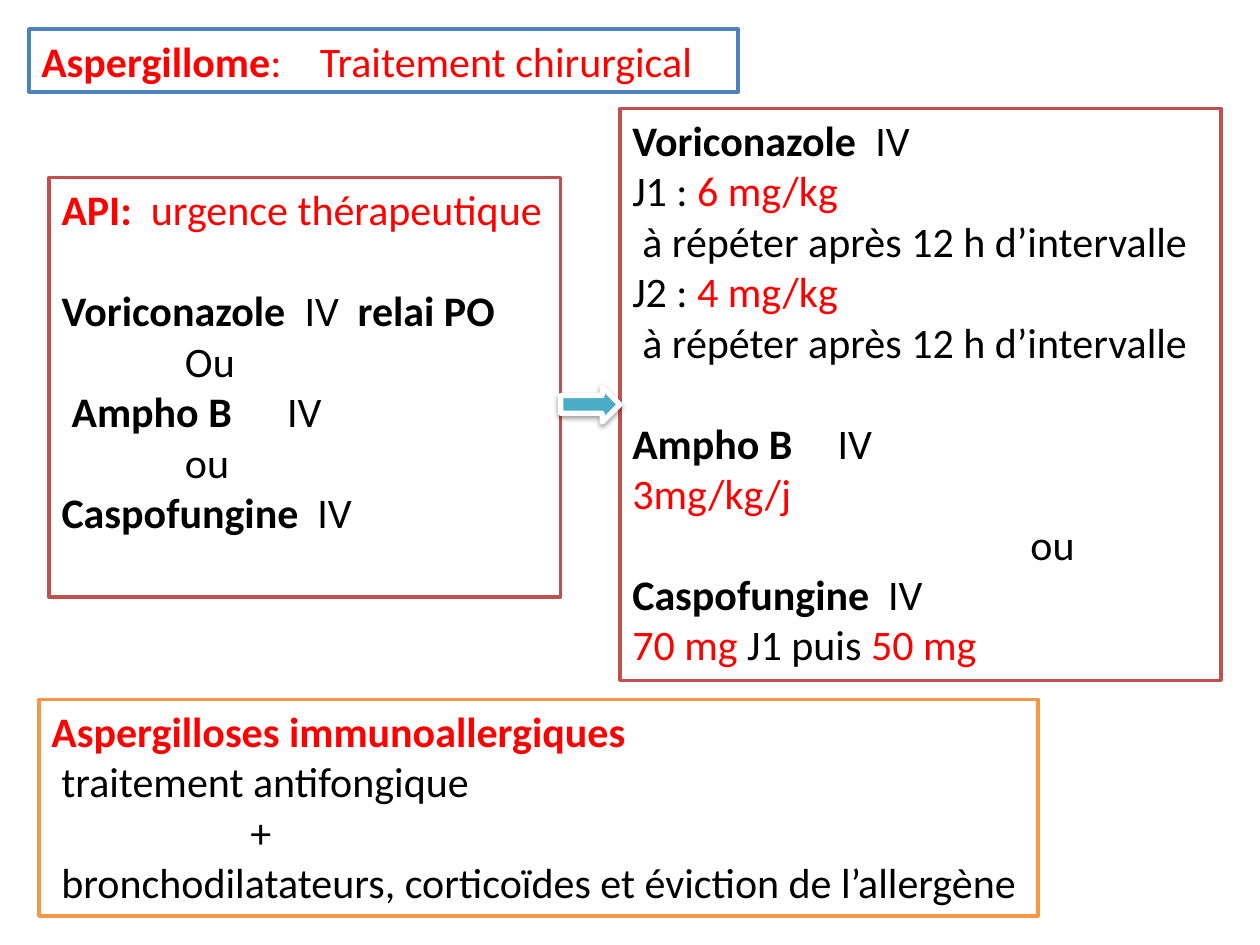
from dataclasses import dataclass

from lxml import etree
from pptx import Presentation
from pptx import util as u
from pptx.dml.color import RGBColor
from pptx.enum import shapes, text
from pptx.oxml import ns


@dataclass(frozen=True)
class Theme:
    font: str = "Calibri"
    size: int = 24
    blank_line: int = 29
    black: str = "000000"
    red: str = "FF0000"
    white: str = "FFFFFF"
    blue: str = "4F81BD"
    brick: str = "C0504D"
    orange: str = "F79646"
    teal: str = "4BACC6"


THEME = Theme()


def plain(words):
    return words, THEME.black, False


def strong(words):
    return words, THEME.black, True


def red(words):
    return words, THEME.red, False


def heading(words):
    return words, THEME.red, True


def line(*runs, indent=0, tabs=(), gap=False):
    return runs, indent, tabs, gap


def drug(name, tab, **options):
    return line(strong(name), plain("\tIV"), tabs=(tab,), **options)


def add_shape(slide, kind, place, fill, outline, width):
    shape = slide.shapes.add_shape(kind, *map(u.Inches, place))
    shape.fill.solid()
    shape.fill.fore_color.rgb = RGBColor.from_string(fill)
    shape.line.color.rgb = RGBColor.from_string(outline)
    shape.line.width = u.Pt(width)
    shape.shadow.inherit = False
    return shape


def add_tabs(properties, tabs):
    tab_list = etree.SubElement(properties, ns.qn("a:tabLst"))
    for position in tabs:
        etree.SubElement(tab_list, ns.qn("a:tab"), pos=str(u.Inches(position)), algn="l")


def add_line(paragraph, runs, indent, tabs, gap):
    properties = paragraph._p.get_or_add_pPr()
    properties.set("marL", str(u.Inches(indent)))
    if tabs:
        add_tabs(properties, tabs)
    paragraph.alignment = text.PP_ALIGN.LEFT
    if gap:
        paragraph.space_before = u.Pt(THEME.blank_line)
    for words, color, bold in runs:
        run = paragraph.add_run()
        run.text = words
        run.font.name = THEME.font
        run.font.size = u.Pt(THEME.size)
        run.font.bold = bold
        run.font.color.rgb = RGBColor.from_string(color)


def add_box(slide, place, outline, lines):
    shape = add_shape(slide, shapes.MSO_SHAPE.RECTANGLE, place, THEME.white, outline, 2)
    frame = shape.text_frame
    frame.word_wrap = True
    frame.vertical_anchor = text.MSO_ANCHOR.TOP
    for index, content in enumerate(lines):
        paragraph = frame.add_paragraph() if index else frame.paragraphs[0]
        add_line(paragraph, *content)


def add_arrow(slide, place):
    arrow = add_shape(slide, shapes.MSO_SHAPE.RIGHT_ARROW, place, THEME.teal, THEME.white, 3)
    effects = arrow._element.spPr.find(ns.qn("a:effectLst"))
    shadow = etree.SubElement(
        effects, ns.qn("a:outerShdw"), blurRad=str(u.Pt(3.1)), dist=str(u.Pt(1.6)),
        dir="5400000", rotWithShape="0",
    )
    color = etree.SubElement(shadow, ns.qn("a:srgbClr"), val=THEME.black)
    etree.SubElement(color, ns.qn("a:alpha"), val="38000")


def main():
    presentation = Presentation()
    presentation.slide_width = u.Inches(10)
    presentation.slide_height = u.Inches(7.5)
    slide = presentation.slides.add_slide(presentation.slide_layouts[6])

    add_box(slide, (0.23, 0.23, 5.63, 0.5), THEME.blue, [
        line(heading("Aspergillome"), red(":\tTraitement chirurgical"), tabs=(2.21,)),
    ])
    add_box(slide, (0.39, 1.41, 4.06, 3.33), THEME.brick, [
        line(heading("API:"), red("\turgence thérapeutique"), tabs=(0.71,)),
        line(strong("Voriconazole"), plain("\tIV"), strong("\trelai PO"),
             tabs=(1.93, 2.35), gap=True),
        line(plain("Ou"), indent=0.98),
        drug("Ampho B", 1.71, indent=0.08),
        line(plain("ou"), indent=0.98),
        drug("Caspofungine", 2.03),
    ])
    add_box(slide, (0.31, 5.55, 7.93, 1.72), THEME.orange, [
        line(heading("Aspergilloses immunoallergiques")),
        line(plain("traitement antifongique"), indent=0.08),
        line(plain("+"), indent=1.58),
        line(plain("bronchodilatateurs, corticoïdes et éviction de l’allergène"), indent=0.08),
    ])
    repeat = line(plain("à répéter après 12 h d’intervalle"), indent=0.08)
    add_box(slide, (4.92, 0.86, 4.77, 4.54), THEME.brick, [
        drug("Voriconazole", 1.93),
        line(plain("J1 : "), red("6 mg/kg")),
        repeat,
        line(plain("J2 : "), red("4 mg/kg")),
        repeat,
        drug("Ampho B", 1.63, gap=True),
        line(red("3mg/kg/j")),
        line(plain("ou"), indent=3.16),
        drug("Caspofungine", 2.03),
        line(red("70 mg "), plain("J1 puis "), red("50 mg")),
    ])
    add_arrow(slide, (4.45, 3.07, 0.47, 0.28))
    presentation.save("out.pptx")


if __name__ == "__main__":
    main()
